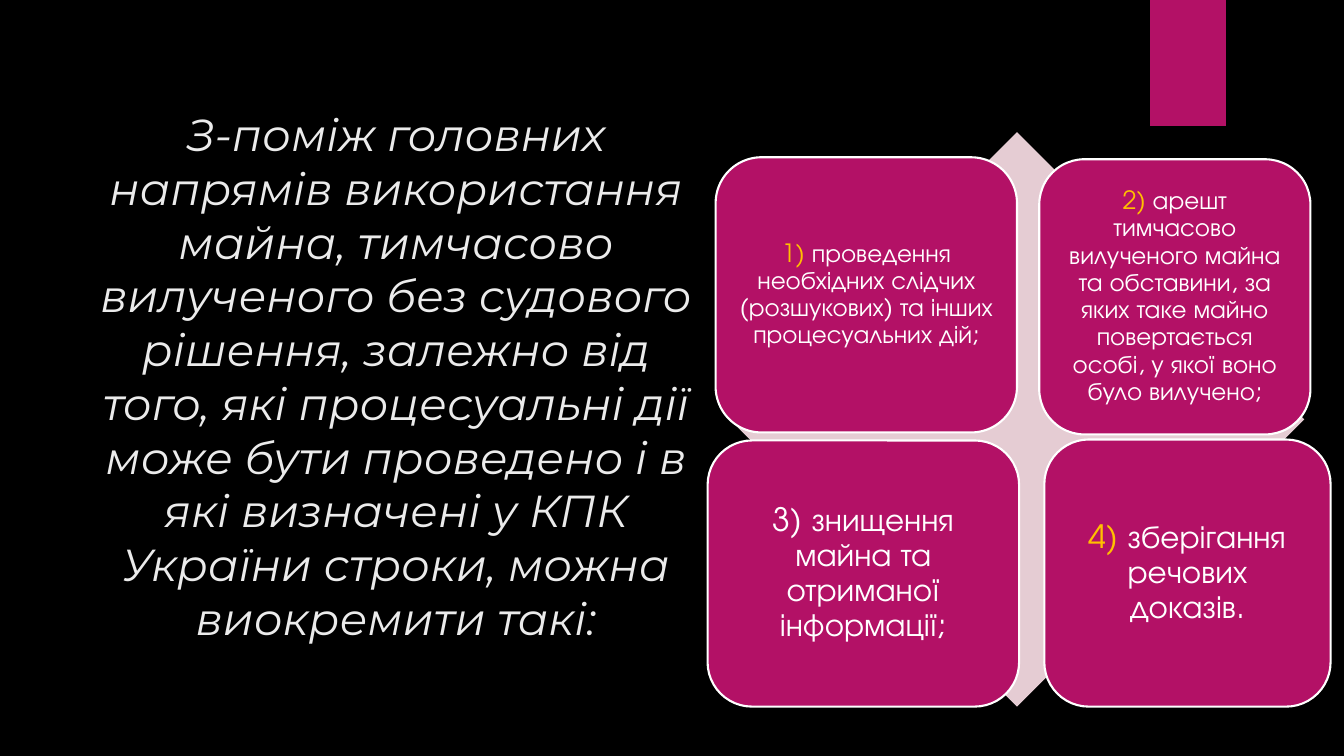
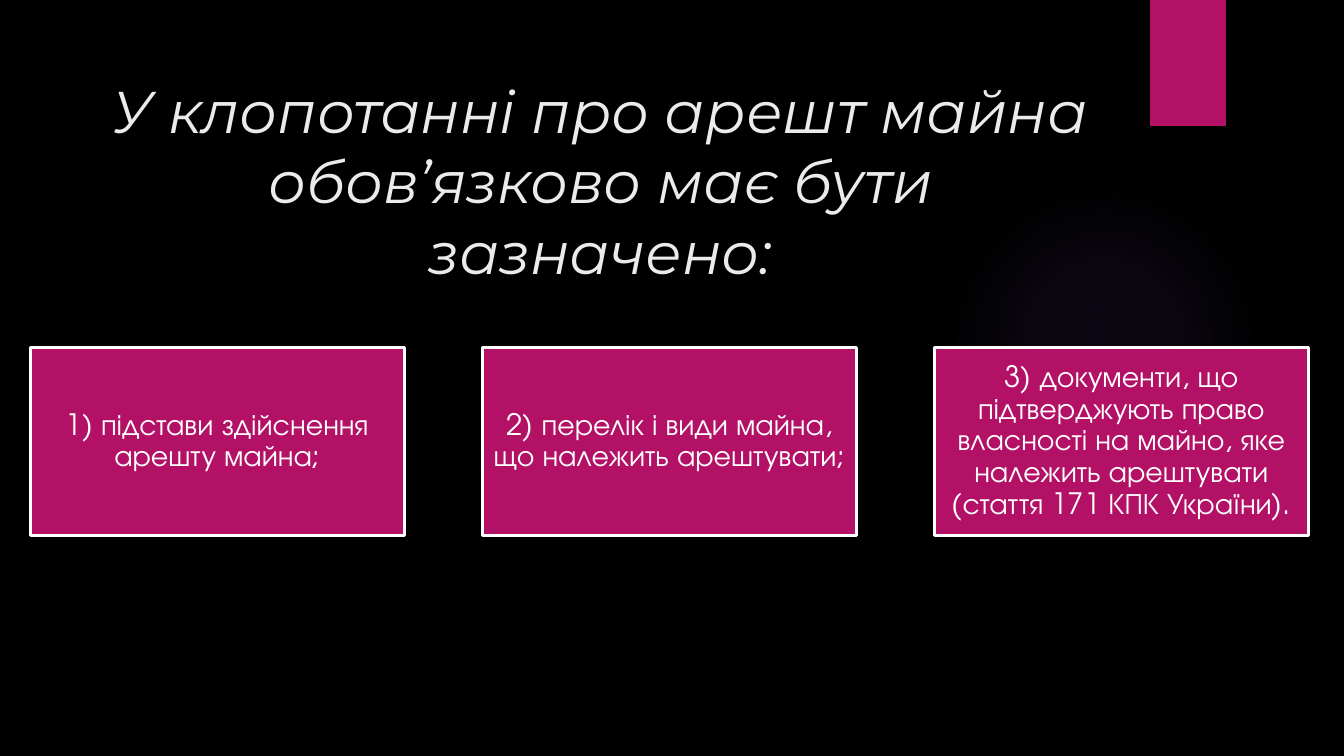
from dataclasses import dataclass

from pptx import Presentation
from pptx.dml.color import RGBColor
from pptx.enum.shapes import MSO_SHAPE as Shape
from pptx.enum.text import MSO_ANCHOR as Anchor, PP_ALIGN as Align
from pptx.oxml import parse_xml
from pptx.oxml.ns import nsdecls
from pptx.util import Inches, Pt

COLORS = {
    "background": "000000",
    "accent": "B31166",
    "diamond": "E5CCD3",
    "title": "EBEBEB",
    "text": "FFFFFF",
    "number": "FFC000",
    "glow": "9B6BF2",
}
TITLE_FONT = "Montserrat"
BODY_FONT = "TeX Gyre Adventor"
GLOW_STOPS = [(0, 7), (36, 6), (69, 0)]


@dataclass
class Box:
    left: float
    top: float
    width: float
    height: float

    def area(self, left, top, width, height):
        return Box(
            self.left + self.width * left / 100,
            self.top + self.height * top / 100,
            self.width * width / 100,
            self.height * height / 100,
        )

    def lengths(self):
        return [Inches(v) for v in (self.left, self.top, self.width, self.height)]


PAGE = Box(0, 0, 13.33, 7.5)


def color(name):
    return RGBColor.from_string(COLORS[name])


def add_plain_shape(slide, kind, box, fill, line_width=0):
    shape = slide.shapes.add_shape(kind, *box.lengths())
    shape.shadow.inherit = False
    shape.fill.solid()
    shape.fill.fore_color.rgb = color(fill)
    if line_width:
        shape.line.color.rgb = color("text")
        shape.line.width = Pt(line_width)
    else:
        shape.line.fill.background()
    return shape


def format_run(run, font, size, color_name, italic=False):
    run.font.name = font
    run.font.size = Pt(size)
    run.font.italic = italic
    run.font.color.rgb = color(color_name)


def set_margins(text_frame, margin):
    text_frame.margin_left = text_frame.margin_right = Inches(margin)
    text_frame.margin_top = text_frame.margin_bottom = Inches(margin)


def add_glow(slide, box):
    glow = add_plain_shape(slide, Shape.OVAL, box, "glow")
    stops = "".join(
        f'<a:gs pos="{position * 1000}"><a:srgbClr val="{COLORS["glow"]}">'
        f'<a:alpha val="{alpha * 1000}"/></a:srgbClr></a:gs>'
        for position, alpha in GLOW_STOPS
    )
    gradient = parse_xml(
        f'<a:gradFill {nsdecls("a")} rotWithShape="1"><a:gsLst>{stops}</a:gsLst>'
        '<a:path path="circle"><a:fillToRect l="50000" t="50000" r="50000" b="50000"/>'
        "</a:path></a:gradFill>"
    )
    properties = glow.element.spPr
    properties.replace(properties.find("{*}solidFill"), gradient)


def add_title(slide, box, text, size):
    text_frame = slide.shapes.add_textbox(*box.lengths()).text_frame
    text_frame.word_wrap = True
    text_frame.vertical_anchor = Anchor.TOP
    text_frame.text = text
    paragraph = text_frame.paragraphs[0]
    paragraph.alignment = Align.CENTER
    format_run(paragraph.runs[0], TITLE_FONT, size, "title", italic=True)


def add_card(slide, kind, box, pieces, size, margin, line_width):
    card = add_plain_shape(slide, kind, box, "accent", line_width)
    text_frame = card.text_frame
    text_frame.word_wrap = True
    text_frame.vertical_anchor = Anchor.MIDDLE
    set_margins(text_frame, margin)
    paragraph = text_frame.paragraphs[0]
    paragraph.alignment = Align.CENTER
    paragraph.line_spacing = 0.9
    for text, color_name in pieces:
        run = paragraph.add_run()
        run.text = text
        format_run(run, BODY_FONT, size, color_name)


def add_diamond_matrix(slide, box, cards):
    add_plain_shape(slide, Shape.DIAMOND, box.area(3.56, 0, 92.23, 100), "diamond")
    for place, size, margin, pieces in cards:
        add_card(slide, Shape.ROUNDED_RECTANGLE, box.area(*place), pieces, size, margin, 1.5)


def add_card_row(slide, box, texts, card_share=29.26):
    step = (100 - card_share) / (len(texts) - 1)
    for index, text in enumerate(texts):
        place = box.area(index * step, 0, card_share, 100)
        add_card(slide, Shape.RECTANGLE, place, [(text, "text")], 21, 0.01, 2.25)


def add_base_slide(presentation):
    slide = presentation.slides.add_slide(presentation.slide_layouts[6])
    slide.background.fill.solid()
    slide.background.fill.fore_color.rgb = color("background")
    add_glow(slide, PAGE.area(70.58, 24.4, 23.1, 41.07))
    add_plain_shape(slide, Shape.RECTANGLE, PAGE.area(85.58, 0, 5.63, 16.67), "accent")
    return slide


def build_directions_slide(presentation):
    slide = add_base_slide(presentation)
    add_title(
        slide,
        PAGE.area(6.6, 13.47, 45.75, 78.53),
        "З-поміж головних напрямів використання майна, тимчасово вилученого без "
        "судового рішення, залежно від того, які процесуальні дії може бути проведено "
        "і в які визначені у КПК України строки, можна виокремити такі:",
        32,
    )
    cards = [
        ((1.29, 4.39, 48.38, 47.89), 18, 0.07, [
            ("1)", "number"),
            (" проведення необхідних слідчих (розшукових) та інших процесуальних дій;", "text"),
        ]),
        ((53.24, 4.74, 43.53, 47.89), 18, 0.07, [
            ("2)", "number"),
            (" арешт тимчасово вилученого майна та обставини, за яких таке майно "
             "повертається особі, у якої воно було вилучено;", "text"),
        ]),
        ((0, 53.68, 50, 46.32), 23, 0.1, [
            ("3) знищення майна та отриманої інформації;", "text"),
        ]),
        ((54.05, 53.51, 45.95, 46.49), 23, 0.1, [
            ("4)", "number"),
            (" зберігання речових доказів.", "text"),
        ]),
    ]
    add_diamond_matrix(slide, PAGE.area(52.65, 17.47, 46.35, 76), cards)


def build_request_slide(presentation):
    slide = add_base_slide(presentation)
    add_title(
        slide,
        PAGE.area(6.08, 9.2, 77.18, 20.4),
        "У клопотанні про арешт майна обов’язково має бути зазначено:",
        42,
    )
    texts = [
        "1) підстави здійснення арешту майна;",
        "2) перелік і види майна, що належить арештувати;",
        "3) документи, що підтверджують право власності на майно, яке належить "
        "арештувати (стаття 171 КПК України).",
    ]
    add_card_row(slide, PAGE.area(2.25, 46, 95.1, 24.8), texts)


def main():
    presentation = Presentation()
    presentation.slide_width = Inches(PAGE.width)
    presentation.slide_height = Inches(PAGE.height)
    build_directions_slide(presentation)
    build_request_slide(presentation)
    presentation.save("out.pptx")


if __name__ == "__main__":
    main()
